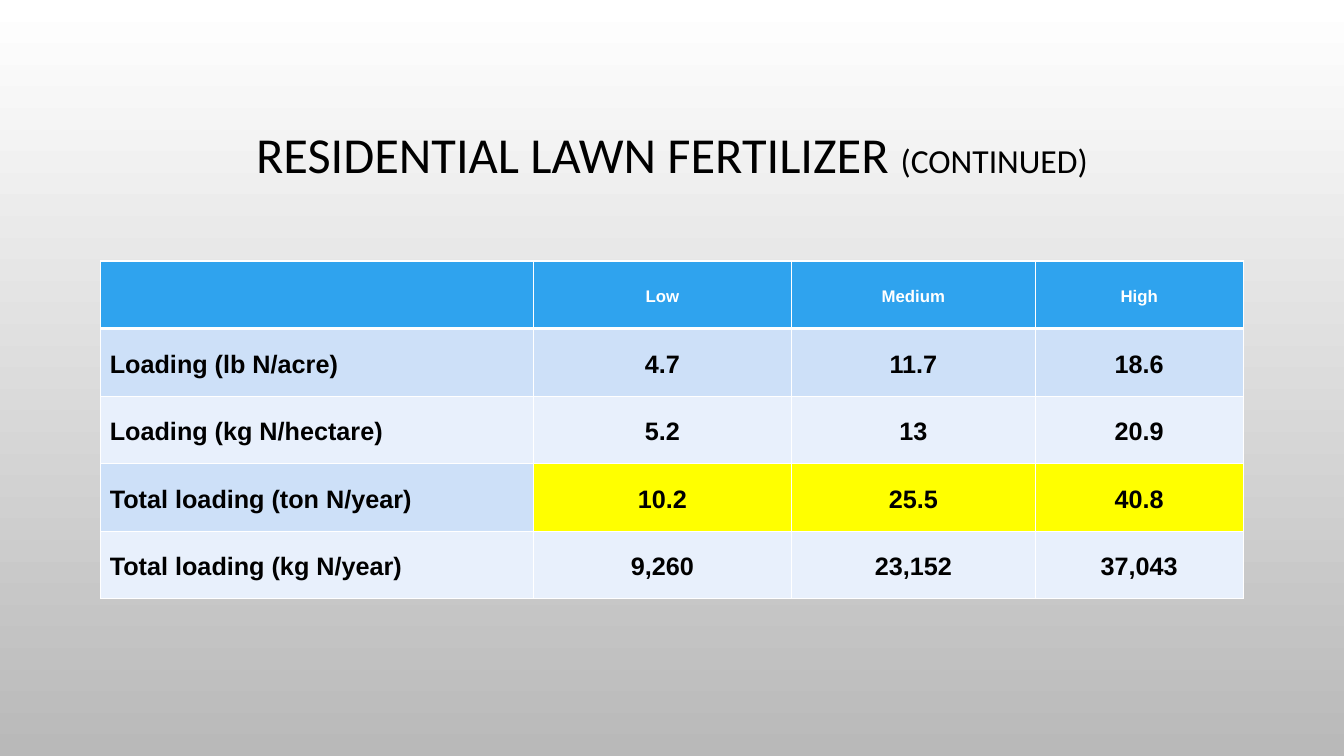
"""Build the residential lawn fertilizer loading slide."""
from dataclasses import dataclass

from lxml.etree import SubElement
from pptx import Presentation
from pptx.dml.color import RGBColor
from pptx.enum.text import MSO_ANCHOR as Anchor, PP_ALIGN as Align
from pptx.oxml.ns import qn
from pptx.slide import Slide
from pptx.table import _Cell as Cell
from pptx.text.text import _Run as Run
from pptx.util import Emu, Pt

PX = 9144
HEADER_BLUE, BAND_DARK, BAND_LIGHT, HIGHLIGHT = "2FA3EE", "CDE0F8", "E8F0FC", "FFFF00"
WHITE, BLACK = "FFFFFF", "000000"
COLUMN_WIDTHS = (429, 256, 242, 206)
ROW_HEIGHT = 67


@dataclass(frozen=True)
class LoadingRow:
    """One table row with its band and value colours."""
    texts: tuple[str, ...]
    band: str
    value_fill: str
    ink: str = BLACK
    points: int = 18
    top: int = 1
    bottom: int = 1


ROWS = (
    LoadingRow(("", "Low", "Medium", "High"), HEADER_BLUE, HEADER_BLUE, WHITE, 12, bottom=3),
    LoadingRow(("Loading (lb N/acre)", "4.7", "11.7", "18.6"), BAND_DARK, BAND_DARK, top=3),
    LoadingRow(("Loading (kg N/hectare)", "5.2", "13", "20.9"), BAND_LIGHT, BAND_LIGHT),
    LoadingRow(("Total loading (ton N/year)", "10.2", "25.5", "40.8"), BAND_DARK, HIGHLIGHT),
    LoadingRow(("Total loading (kg N/year)", "9,260", "23,152", "37,043"), BAND_LIGHT, BAND_LIGHT),
)


def px(length: int) -> Emu:
    """Turn px into EMU."""
    return Emu(length * PX)


def rgb(code: str) -> RGBColor:
    """Turn a hex string into a colour."""
    return RGBColor.from_string(code)


def style_run(run: Run, face: str, points: int, ink: str, bold: bool = False) -> None:
    """Set the font of a run."""
    run.font.name = face
    run.font.size = Pt(points)
    run.font.color.rgb = rgb(ink)
    run.font.bold = bold


def draw_background(slide: Slide) -> None:
    """Fade the background from white down to grey."""
    fill = slide.background.fill
    fill.gradient()
    fill.gradient_angle = 270
    for stop, code in zip(fill.gradient_stops, (WHITE, "B9B9B9")):
        stop.color.rgb = rgb(code)


def draw_title(slide: Slide) -> None:
    """Draw the title with its smaller suffix."""
    frame = slide.shapes.add_textbox(px(100), px(68), px(1133), px(175)).text_frame
    frame.word_wrap = True
    frame.vertical_anchor = Anchor.MIDDLE
    heading = frame.paragraphs[0]
    heading.alignment = Align.CENTER
    heading.line_spacing = 0.9
    for words, points in (("RESIDENTIAL LAWN FERTILIZER ", 36), ("(CONTINUED)", 24)):
        run = heading.add_run()
        run.text = words
        style_run(run, "Calibri", points, BLACK)


def add_borders(cell: Cell, top: int, bottom: int) -> None:
    """Draw white borders round a cell, with widths in points."""
    properties = cell._tc.get_or_add_tcPr()
    for side, width in (("L", 1), ("R", 1), ("T", top), ("B", bottom)):
        line = SubElement(properties, qn(f"a:ln{side}"), w=str(Pt(width)))
        SubElement(SubElement(line, qn("a:solidFill")), qn("a:srgbClr"), val=WHITE)


def fill_cell(cell: Cell, row: LoadingRow, column: int) -> None:
    """Write and style one cell of a loading row."""
    add_borders(cell, row.top, row.bottom)
    cell.fill.solid()
    cell.fill.fore_color.rgb = rgb(row.value_fill if column else row.band)
    cell.vertical_anchor = Anchor.MIDDLE
    cell.margin_left = cell.margin_right = px(9)
    cell.margin_top = cell.margin_bottom = 0
    cell.text_frame.text = row.texts[column]
    entry = cell.text_frame.paragraphs[0]
    entry.alignment = Align.CENTER if column else Align.LEFT
    entry.line_spacing = 1.15
    for run in entry.runs:
        style_run(run, "Arial", row.points, row.ink, bold=True)


def draw_loading_table(slide: Slide) -> None:
    """Draw the table of nitrogen loadings."""
    table = slide.shapes.add_table(
        len(ROWS), len(COLUMN_WIDTHS), px(100), px(259),
        px(sum(COLUMN_WIDTHS)), px(ROW_HEIGHT * len(ROWS))).table
    for column, width in zip(table.columns, COLUMN_WIDTHS):
        column.width = px(width)
    for index, row in enumerate(ROWS):
        for column in range(len(COLUMN_WIDTHS)):
            fill_cell(table.cell(index, column), row, column)


def main() -> None:
    """Build and save the slide."""
    deck = Presentation()
    deck.slide_width, deck.slide_height = px(1333), px(750)
    slide = deck.slides.add_slide(deck.slide_layouts[6])
    draw_background(slide)
    draw_title(slide)
    draw_loading_table(slide)
    deck.save("out.pptx")


if __name__ == "__main__":
    main()
